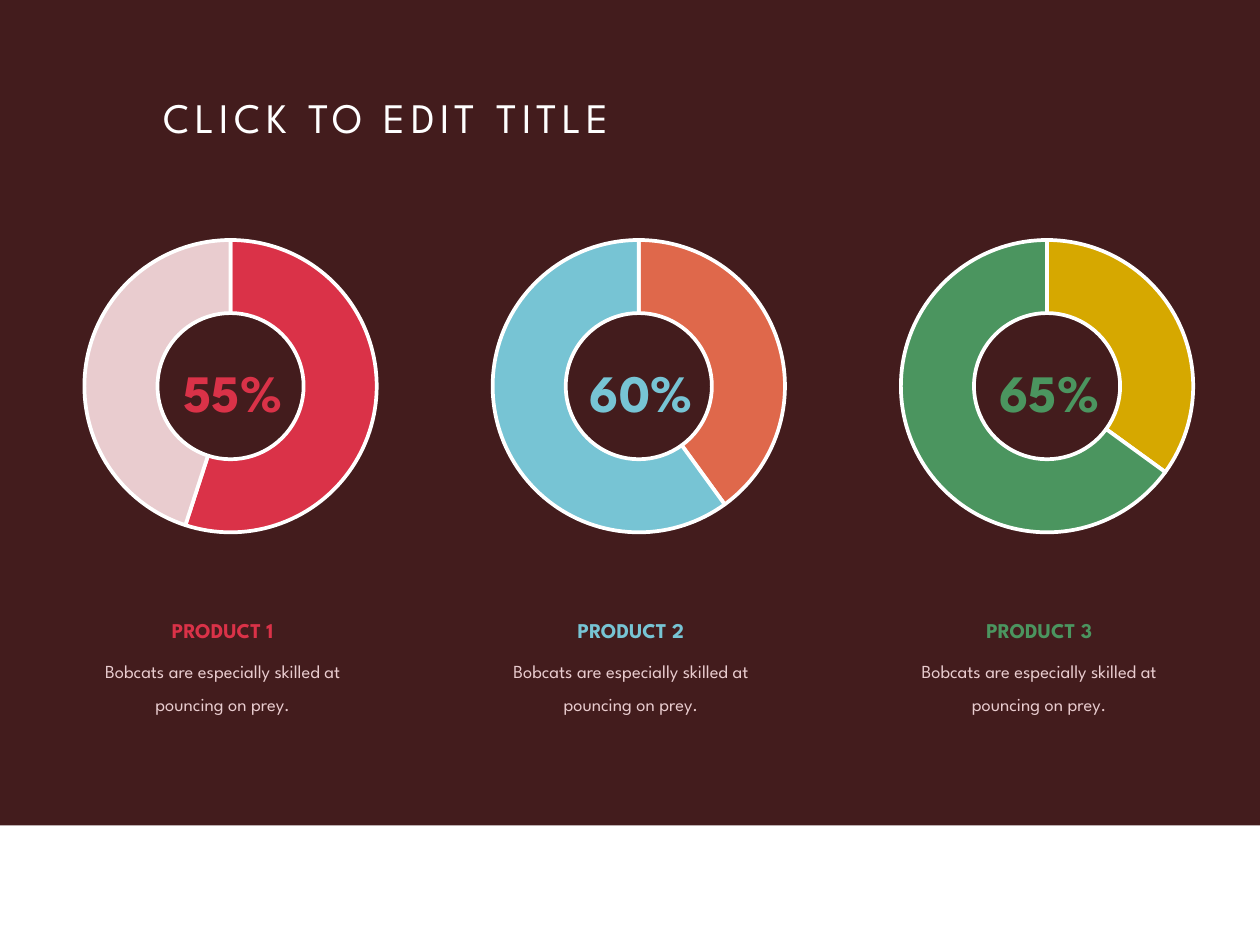
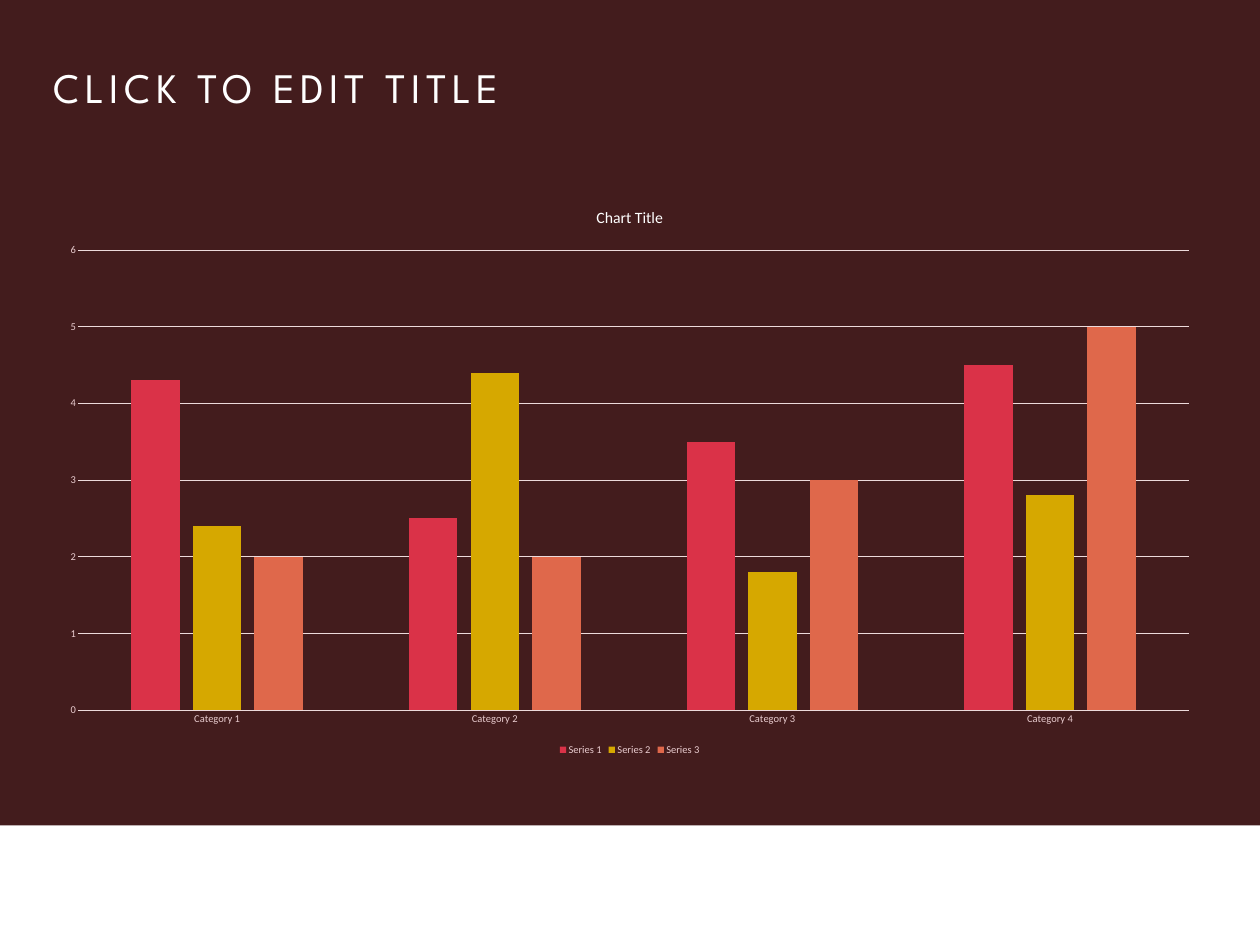
"""Build two slides on a dark band: three product doughnuts and a column chart."""
from lxml.etree import SubElement
from pptx import Presentation
from pptx.chart.data import CategoryChartData
from pptx.dml.color import RGBColor
from pptx.enum.chart import XL_CHART_TYPE, XL_LEGEND_POSITION, XL_TICK_MARK
from pptx.enum.shapes import MSO_SHAPE
from pptx.enum.text import MSO_ANCHOR, MSO_AUTO_SIZE, PP_ALIGN
from pptx.oxml.ns import qn
from pptx.util import Inches, Pt

COLORS = {
    "band": "431C1D", "white": "FFFFFF", "pale": "E9CCCF", "grid": "EDDADB",
    "red": "DA3248", "orange": "DF684B", "blue": "77C4D4",
    "gold": "D6A800", "green": "4B955F",
}
FONT = "League Spartan"
CHART_FONT = "Calibri"


def color(name):
    return RGBColor.from_string(COLORS[name])


def add_label(page, left, top, width, height, text, size, tone, bold=False, wrap=False, spacing=None):
    box = page.shapes.add_textbox(Inches(left), Inches(top), Inches(width), Inches(height))
    frame = box.text_frame
    frame.word_wrap = wrap
    frame.auto_size = MSO_AUTO_SIZE.SHAPE_TO_FIT_TEXT
    para = frame.paragraphs[0]
    para.alignment = PP_ALIGN.CENTER
    para.line_spacing = spacing
    span = para.add_run()
    span.text = text
    span.font.name = FONT
    span.font.size = Pt(size)
    span.font.bold = bold
    span.font.color.rgb = color(tone)


deck = Presentation()
deck.slide_width = Inches(20)
deck.slide_height = Inches(15)
layout = deck.slide_layouts[5]

pages = []
for left, top, width in [(2.5, 1.5, 15), (0.75, 1.01, 16.75)]:
    page = deck.slides.add_slide(layout)
    title = page.shapes.title
    title.left, title.top = Inches(left), Inches(top)
    title.width, title.height = Inches(width), Inches(1.25)
    frame = title.text_frame
    frame.auto_size = MSO_AUTO_SIZE.NONE
    frame.vertical_anchor = MSO_ANCHOR.TOP
    para = frame.paragraphs[0]
    para.alignment = PP_ALIGN.LEFT
    para.line_spacing = 0.9
    span = para.add_run()
    span.text = "CLICK TO EDIT TITLE"
    span.font.name = FONT
    span.font.size = Pt(48)
    span.font.color.rgb = color("white")
    span.font._element.set("spc", "600")
    pages.append(page)
product_page, column_page = pages

band = product_page.shapes.add_shape(MSO_SHAPE.RECTANGLE, 0, 0, Inches(20), Inches(13.1))
band.shadow.inherit = False
band.fill.solid()
band.fill.fore_color.rgb = color("band")
band.line.fill.background()
band.element.nvSpPr.cNvPr.set("id", "20")
deck.slide_master.shapes.element.insert(2, band.element)

products = [
    ("PRODUCT 1", "55%", "red", (55, 45), ("red", "pale")),
    ("PRODUCT 2", "60%", "blue", (40, 60), ("orange", "blue")),
    ("PRODUCT 3", "65%", "green", (35, 65), ("gold", "green")),
]
plot_layout = [
    ("layoutTarget", "inner"), ("xMode", "edge"), ("yMode", "edge"),
    ("x", "0.04"), ("y", "0.01"), ("w", "0.96"), ("h", "0.93"),
]
for index, (name, share, tone, values, slices) in enumerate(products):
    left = 0.41 + 6.48 * index
    data = CategoryChartData()
    data.categories = ["1", "2"]
    data.add_series("Series 1", values)
    chart = product_page.shapes.add_chart(
        XL_CHART_TYPE.DOUGHNUT, Inches(left), Inches(3.76), Inches(6.25), Inches(4.99), data
    ).chart
    chart.has_legend = False
    chart.has_title = False
    chart.font.name = "Open Sans"
    chart.font.size = Pt(54)
    chart.font.color.rgb = color("white")
    for number, slice_tone in enumerate(slices):
        style = chart.plots[0].series[0].points[number].format
        style.fill.solid()
        style.fill.fore_color.rgb = color(slice_tone)
        style.line.color.rgb = color("white")
        style.line.width = Pt(4.25)
    plot_area = chart.element.find(".//" + qn("c:plotArea"))
    plot_area.find(".//" + qn("c:holeSize")).set("val", "64")
    for old_layout in plot_area.findall(qn("c:layout")):
        plot_area.remove(old_layout)
    new_layout = SubElement(plot_area, qn("c:layout"))
    plot_area.insert(0, new_layout)
    manual = SubElement(new_layout, qn("c:manualLayout"))
    for tag, value in plot_layout:
        SubElement(manual, qn("c:" + tag)).set("val", value)

    add_label(product_page, left + 2.28, 5.67, 2.01, 1.11, share, 60, tone, bold=True)
    add_label(product_page, left + 2.05, 9.76, 2.15, 0.5, name, 24, tone, bold=True)
    add_label(product_page, left + 0.63, 10.26, 4.99, 1.12,
              "Bobcats are especially skilled at pouncing on prey.", 21, "pale", wrap=True, spacing=1.5)

data = CategoryChartData()
data.categories = [f"Category {number}" for number in range(1, 5)]
data.add_series("Series 1", (4.3, 2.5, 3.5, 4.5))
data.add_series("Series 2", (2.4, 4.4, 1.8, 2.8))
data.add_series("Series 3", (2, 2, 3, 5))
chart = column_page.shapes.add_chart(
    XL_CHART_TYPE.COLUMN_CLUSTERED, Inches(0.75), Inches(3), Inches(18.49), Inches(9.04), data
).chart
chart.font.name = CHART_FONT
chart.font.size = Pt(10)

chart.has_title = True
span = chart.chart_title.text_frame.paragraphs[0].add_run()
span.text = "Chart Title"
span.font.name = CHART_FONT
span.font.size = Pt(18)
span.font.bold = False
span.font.color.rgb = color("white")

chart.has_legend = True
chart.legend.position = XL_LEGEND_POSITION.BOTTOM
chart.legend.include_in_layout = False
category_axis, value_axis = chart.category_axis, chart.value_axis
for axis in (category_axis, value_axis):
    axis.major_tick_mark = XL_TICK_MARK.NONE
    axis.minor_tick_mark = XL_TICK_MARK.NONE
for font in (category_axis.tick_labels.font, value_axis.tick_labels.font, chart.legend.font):
    font.name = CHART_FONT
    font.size = Pt(12)
    font.color.rgb = color("pale")
value_axis.minimum_scale = 0
value_axis.maximum_scale = 6
value_axis.major_unit = 1
value_axis.format.line.fill.background()
for line in (category_axis.format.line, value_axis.major_gridlines.format.line):
    line.color.rgb = color("grid")
    line.width = Pt(0.75)

plot = chart.plots[0]
plot.vary_by_categories = False
plot.gap_width = 219
plot.overlap = -27
for series, tone in zip(plot.series, ("red", "gold", "orange")):
    series.format.fill.solid()
    series.format.fill.fore_color.rgb = color(tone)

deck.save("out.pptx")
